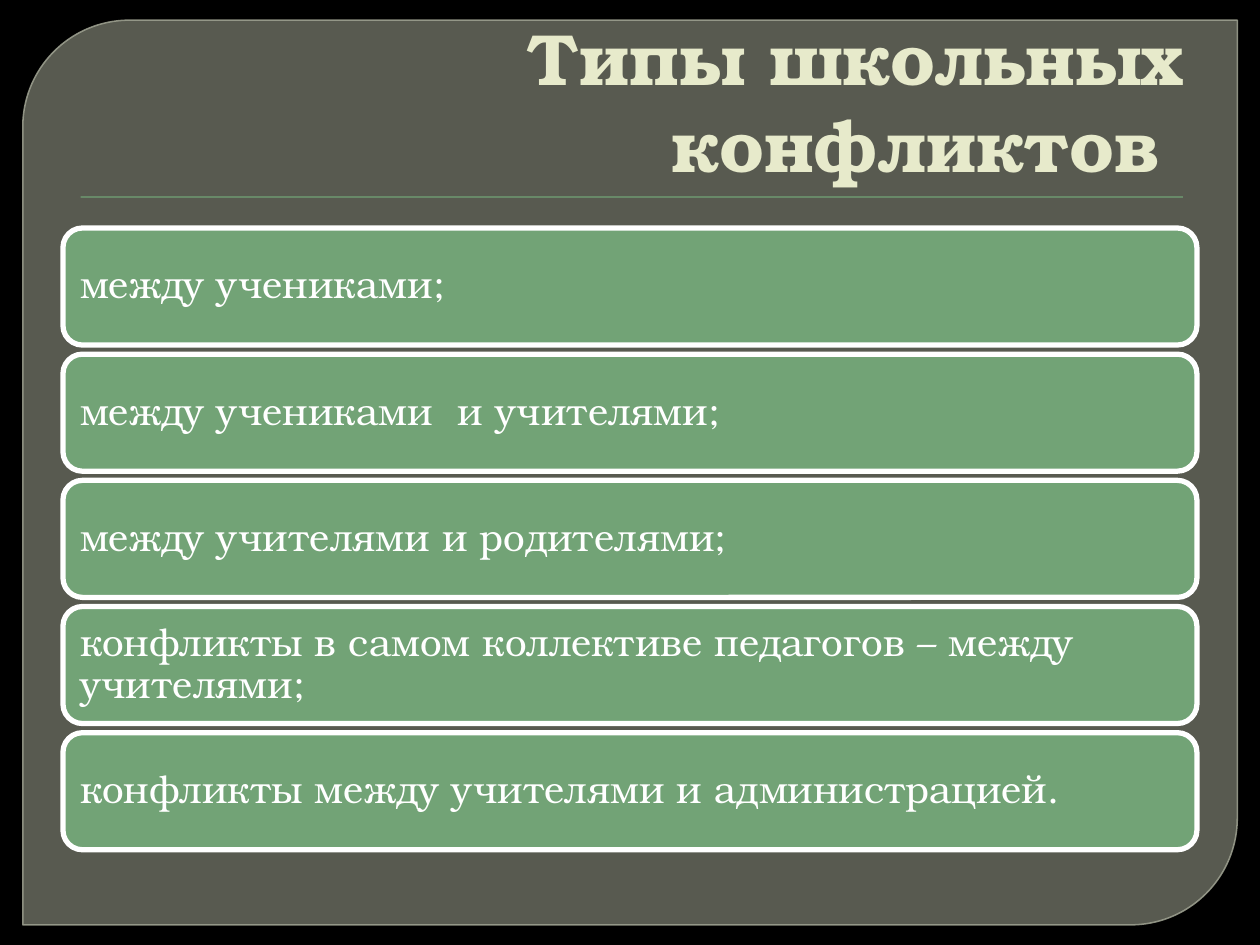
from dataclasses import dataclass

from lxml import etree
from pptx import Presentation
from pptx import util as u
from pptx.dml.color import RGBColor
from pptx.enum import shapes, text
from pptx.oxml import ns


@dataclass(frozen=True)
class Theme:
    font: str = "TeX Gyre Bonum"
    backdrop: str = "000000"
    panel: str = "888B7B"
    panel_edge: str = "9DA090"
    accent: str = "72A376"
    title: str = "E7EACB"
    light: str = "FFFFFF"
    title_size: float = 41.4
    body_size: float = 22


@dataclass(frozen=True)
class Box:
    left: float
    top: float
    width: float
    height: float

    def lengths(self):
        return [u.Pt(n) for n in (self.left, self.top, self.width, self.height)]


THEME = Theme()
TITLE = "Типы школьных конфликтов "
CONFLICTS = [
    "между учениками; ",
    "между учениками  и учителями;",
    "между учителями и родителями;",
    "конфликты в самом коллективе педагогов – между учителями;",
    "конфликты между учителями и администрацией.",
]


def color(code):
    return RGBColor.from_string(code)


def set_opacity(color_format_fill, percent):
    """Add an alpha value to the solid colour found under an element."""
    target = color_format_fill.find(".//" + ns.qn("a:srgbClr"))
    etree.SubElement(target, ns.qn("a:alpha"), val=str(percent * 1000))


def add_filled(page, kind, box, fill, edge=None, edge_width=0):
    shape = page.shapes.add_shape(kind, *box.lengths())
    shape.shadow.inherit = False
    shape.fill.solid()
    shape.fill.fore_color.rgb = color(fill)
    if edge:
        shape.line.color.rgb = color(edge)
        shape.line.width = u.Pt(edge_width)
    else:
        shape.line.fill.background()
    return shape


def format_text(frame, size, code, bold=False):
    for para in frame.paragraphs:
        for span in para.runs:
            span.font.name = THEME.font
            span.font.size = u.Pt(size)
            span.font.bold = bold
            span.font.color.rgb = color(code)


def draw_panel(page, box):
    # Translucent panel with two rounded corners
    panel = add_filled(page, shapes.MSO_SHAPE.ROUND_2_DIAG_RECTANGLE, box,
                       THEME.panel, THEME.panel_edge, 0.87)
    panel.adjustments[0] = 0.118
    panel.adjustments[1] = 0
    properties = panel._element.spPr
    set_opacity(properties.find(ns.qn("a:solidFill")), 65)
    set_opacity(properties.find(ns.qn("a:ln")), 88)


def draw_title(page, box):
    # Rule just below the title
    rule = Box(box.left + 10, box.top + box.height + 2, box.width - 18, 0.75)
    add_filled(page, shapes.MSO_SHAPE.RECTANGLE, rule, THEME.accent)

    # Title, brought in front of the panel
    title = page.shapes.title
    title.left, title.top, title.width, title.height = box.lengths()
    page.shapes._spTree.append(title._element)
    frame = title.text_frame
    frame.text = TITLE
    frame.word_wrap = True
    frame.auto_size = text.MSO_AUTO_SIZE.NONE
    frame.vertical_anchor = text.MSO_ANCHOR.BOTTOM
    frame.paragraphs[0].alignment = text.PP_ALIGN.RIGHT
    format_text(frame, THEME.title_size, THEME.title, bold=True)


def draw_conflicts(page, box, gap=5.2):
    # Equal bars stacked from top to bottom
    count = len(CONFLICTS)
    height = (box.height - gap * (count - 1)) / count
    for index, wording in enumerate(CONFLICTS):
        place = Box(box.left, box.top + index * (height + gap), box.width, height)
        bar = add_filled(page, shapes.MSO_SHAPE.ROUNDED_RECTANGLE, place,
                         THEME.accent, THEME.light, 3)
        frame = bar.text_frame
        frame.text = wording
        frame.word_wrap = True
        frame.vertical_anchor = text.MSO_ANCHOR.MIDDLE
        frame.margin_left = frame.margin_right = u.Pt(6.5)
        frame.margin_top = frame.margin_bottom = u.Pt(6.5)
        frame.paragraphs[0].alignment = text.PP_ALIGN.LEFT
        frame.paragraphs[0].line_spacing = 0.9
        format_text(frame, THEME.body_size, THEME.light)


def main():
    deck = Presentation()
    deck.slide_width, deck.slide_height = u.Pt(720), u.Pt(540)
    page = deck.slides.add_slide(deck.slide_layouts.get_by_name("Title Only"))
    page.background.fill.solid()
    page.background.fill.fore_color.rgb = color(THEME.backdrop)

    draw_panel(page, Box(13, 11.5, 694, 517))
    draw_title(page, Box(36, 20.2, 648, 90))
    draw_conflicts(page, Box(36, 130.3, 648, 355.3))
    deck.save("out.pptx")


if __name__ == "__main__":
    main()
